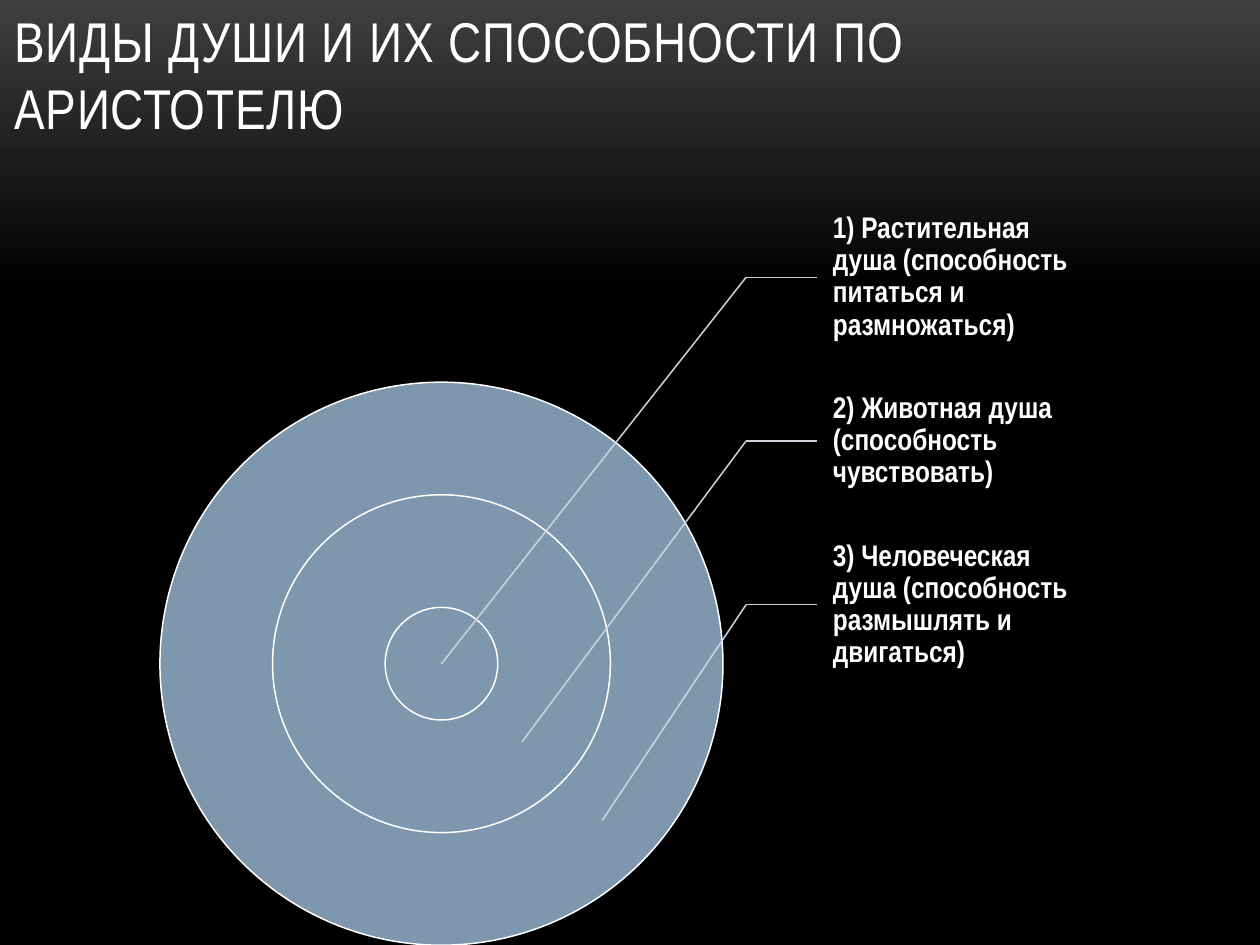
import pptx
import pptx.dml.color
import pptx.enum.shapes
import pptx.enum.text
import pptx.oxml.ns
import pptx.util
from lxml import etree
from pptx.util import Cm

FONT = "Arial Narrow"
WHITE = "FFFFFF"
CIRCLE_BLUE = "7E97AD"
LEADER_GREY = "CCD3DB"
LINE_WIDTH = 0.85

TITLE = "ВИДЫ ДУШИ И ИХ СПОСОБНОСТИ ПО АРИСТОТЕЛЮ"
SOULS = [
    "1) Растительная душа (способность питаться и размножаться)",
    "2) Животная душа (способность чувствовать)",
    "3) Человеческая душа (способность размышлять и двигаться)",
]

CENTER_X, CENTER_Y = 8.9, 13.38
CORE_DIAMETER = 2.27
LABEL_LEFT, LABEL_TOP = 16.46, 3.94
LABEL_WIDTH, LABEL_HEIGHT = 5.66, 3.3
ELBOW_X = 15.04
TARGET_STEP_X, TARGET_STEP_Y = 1.62, 1.58


def color(value):
    return pptx.dml.color.RGBColor.from_string(value)


def set_background(slide):
    fill = slide.background.fill
    fill.gradient()
    fill.gradient_angle = 270
    for stop, position, value in zip(fill.gradient_stops, (0, 0.31), ("3F3F3F", "000000")):
        stop.position = position
        stop.color.rgb = color(value)


def add_run(paragraph, text, size, bold=False):
    run = paragraph.add_run()
    run.text = text
    run.font.name = FONT
    run.font.size = pptx.util.Pt(size)
    run.font.bold = bold
    run.font.color.rgb = color(WHITE)
    return run


def format_title(slide):
    title = slide.shapes.title
    title.left, title.top = Cm(0.03), Cm(0)
    title.width, title.height = Cm(21.89), Cm(3.78)
    frame = title.text_frame
    frame.word_wrap = True
    frame.auto_size = pptx.enum.text.MSO_AUTO_SIZE.NONE
    frame.vertical_anchor = pptx.enum.text.MSO_ANCHOR.TOP
    paragraph = frame.paragraphs[0]
    paragraph.alignment = pptx.enum.text.PP_ALIGN.LEFT
    run = add_run(paragraph, TITLE, 32)
    run._r.get_or_add_rPr().set("spc", "50")


def add_circle(shapes, diameter):
    circle = shapes.add_shape(
        pptx.enum.shapes.MSO_SHAPE.OVAL,
        Cm(CENTER_X - diameter / 2), Cm(CENTER_Y - diameter / 2),
        Cm(diameter), Cm(diameter),
    )
    circle.shadow.inherit = False
    circle.fill.solid()
    circle.fill.fore_color.rgb = color(CIRCLE_BLUE)
    circle.line.color.rgb = color(WHITE)
    circle.line.width = pptx.util.Pt(LINE_WIDTH)


def add_label(shapes, text, top):
    box = shapes.add_textbox(Cm(LABEL_LEFT), Cm(top), Cm(LABEL_WIDTH), Cm(LABEL_HEIGHT))
    frame = box.text_frame
    frame.word_wrap = True
    frame.vertical_anchor = pptx.enum.text.MSO_ANCHOR.MIDDLE
    frame.margin_left = Cm(0.33)
    frame.margin_top = frame.margin_right = frame.margin_bottom = Cm(0.05)
    paragraph = frame.paragraphs[0]
    paragraph.line_spacing = 0.9
    add_run(paragraph, text, 17, bold=True)


def add_line(shapes, start, end):
    line = shapes.add_connector(
        pptx.enum.shapes.MSO_CONNECTOR.STRAIGHT,
        Cm(start[0]), Cm(start[1]), Cm(end[0]), Cm(end[1]),
    )
    line.line.color.rgb = color(LEADER_GREY)
    line.line.width = pptx.util.Pt(LINE_WIDTH)
    etree.SubElement(line._element.spPr, pptx.oxml.ns.qn("a:effectLst"))


def add_soul_diagram(slide):
    shapes = slide.shapes.add_group_shape().shapes
    for ratio in (5, 3, 1):
        add_circle(shapes, CORE_DIAMETER * ratio)
    for index, text in enumerate(SOULS):
        top = LABEL_TOP + index * LABEL_HEIGHT
        middle = top + LABEL_HEIGHT / 2
        elbow = (ELBOW_X, middle)
        target = (CENTER_X + index * TARGET_STEP_X, CENTER_Y + index * TARGET_STEP_Y)
        add_label(shapes, text, top)
        add_line(shapes, elbow, (LABEL_LEFT, middle))
        add_line(shapes, elbow, target)


def main():
    presentation = pptx.Presentation()
    presentation.slide_width = Cm(25.4)
    presentation.slide_height = Cm(19.05)
    slide = presentation.slides.add_slide(presentation.slide_layouts[5])
    set_background(slide)
    format_title(slide)
    add_soul_diagram(slide)
    presentation.save("out.pptx")


if __name__ == "__main__":
    main()
